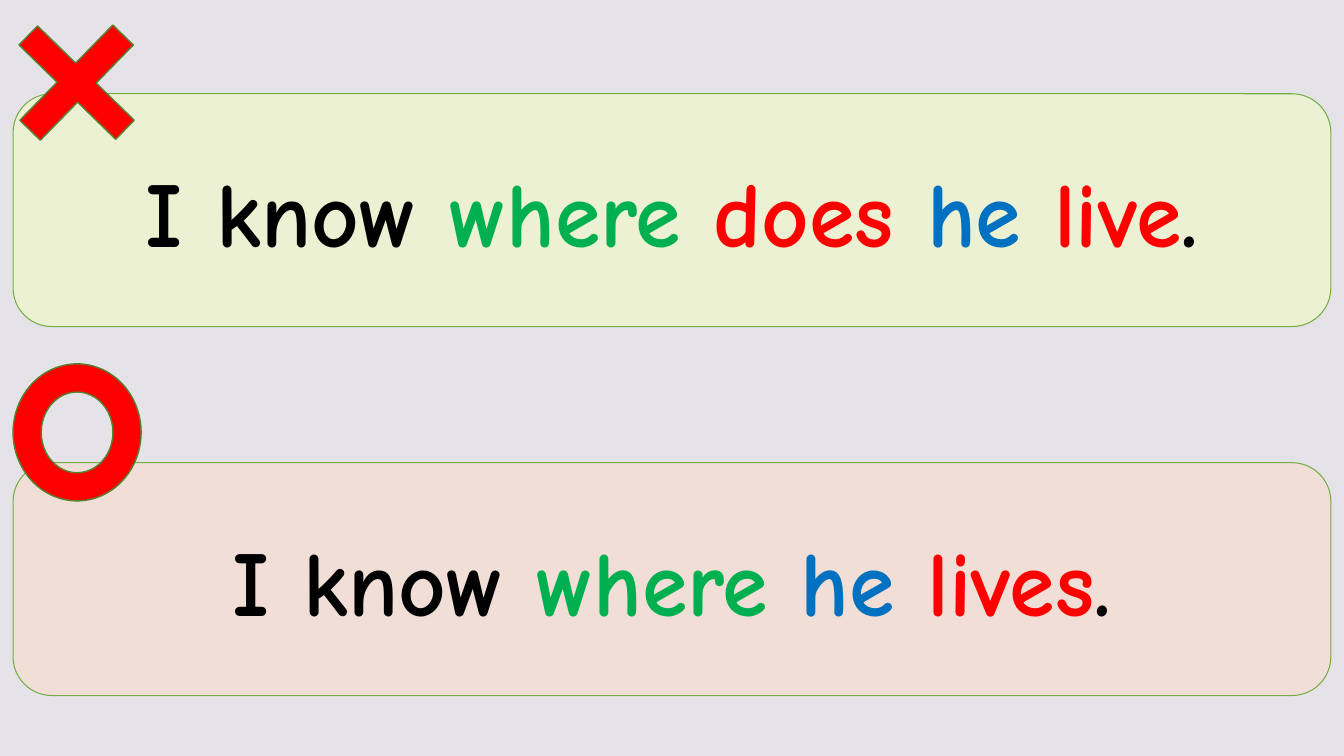
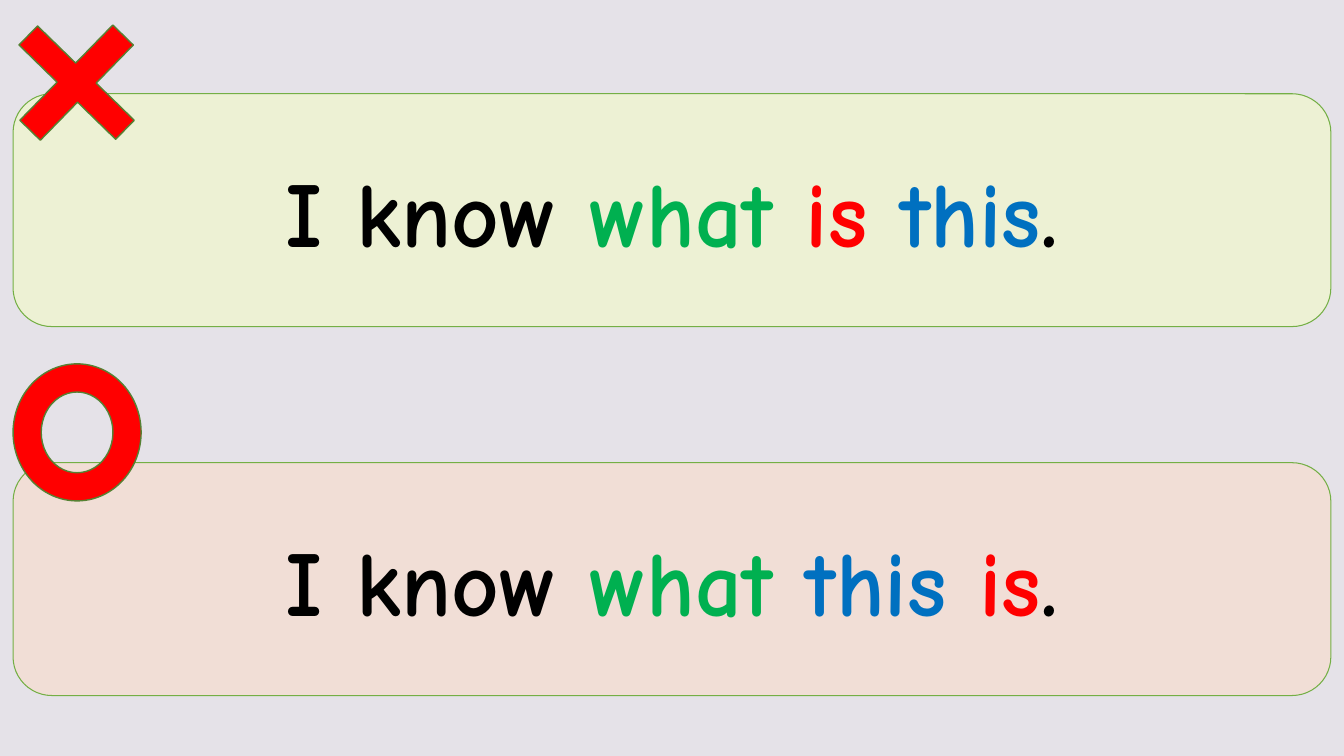
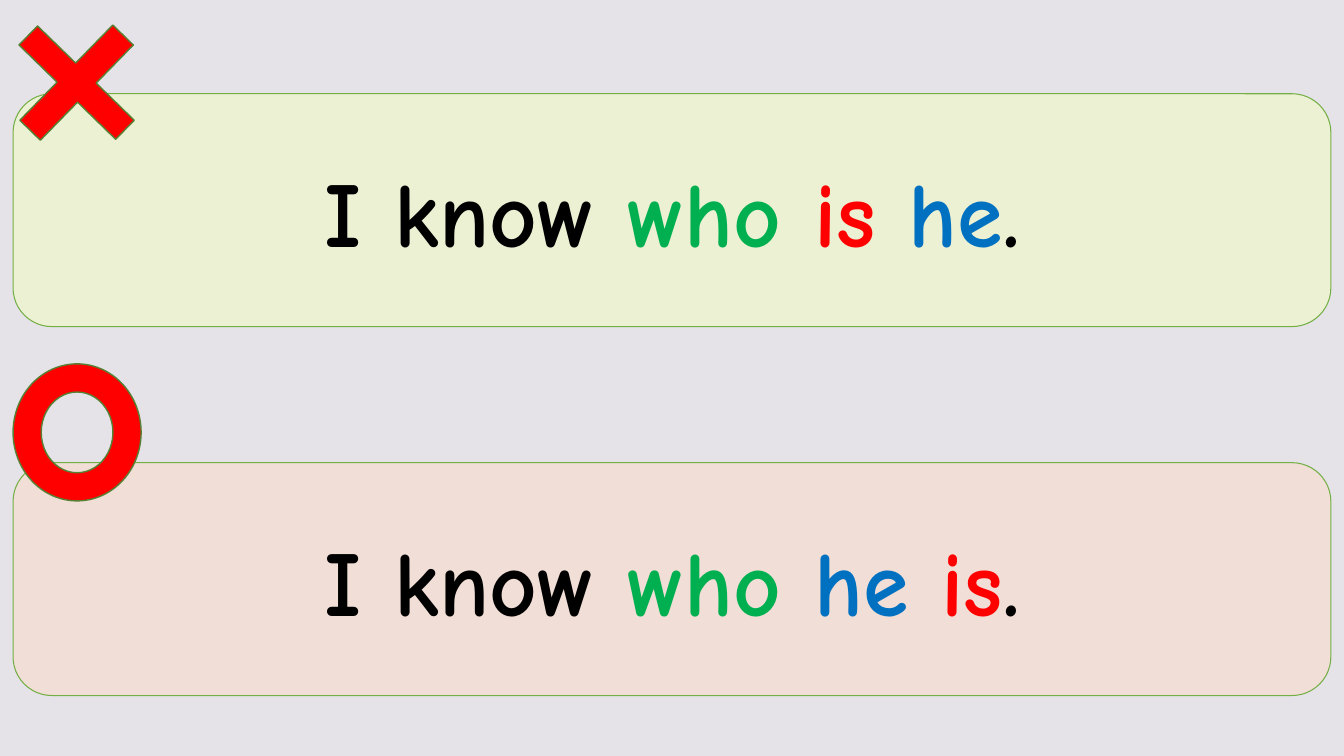
from pptx import Presentation
from pptx.dml.color import RGBColor
from pptx.enum.shapes import MSO_SHAPE
from pptx.enum.text import MSO_ANCHOR, PP_ALIGN
from pptx.util import Pt

PANEL = MSO_SHAPE.FLOWCHART_ALTERNATE_PROCESS
CROSS = MSO_SHAPE.CROSS
RING = MSO_SHAPE.DONUT
MIDDLE = MSO_ANCHOR.MIDDLE
CENTER = PP_ALIGN.CENTER

PX = 9144  # EMU per px, 100 px to the inch
SLIDE_SIZE = (1333, 750)
FONT, FONT_SIZE = "Comic Neue", 66

BACKGROUND = "E5E2E8"
PANEL_LINE, MARK_LINE = "74AF45", "568133"
MARK_FILL = "FF0000"
WORD_COLORS = {
    "plain": "000000",
    "question": "00B050",
    "subject": "0070C0",
    "verb": "FF0000",
}

# One slide each: the wrong word order, then the right one.
SLIDES = [
    (
        [("where ", "question"), ("does ", "verb"), ("he ", "subject"), ("live", "verb")],
        [("where ", "question"), ("he ", "subject"), ("lives", "verb")],
    ),
    (
        [("what ", "question"), ("is ", "verb"), ("this", "subject")],
        [("what ", "question"), ("this ", "subject"), ("is", "verb")],
    ),
    (
        [("who ", "question"), ("is ", "verb"), ("he", "subject")],
        [("who ", "question"), ("he ", "subject"), ("is", "verb")],
    ),
]
OPENING, ENDING = ("I know ", "plain"), (".", "plain")

PANEL_LEFT, PANEL_WIDTH, PANEL_HEIGHT = 13, 1307, 231
ROWS = [
    {"top": 93, "fill": "EDF1D4",
     "mark": {"kind": CROSS, "at": (9, 16, 134, 132), "adjust": 0.4, "rotation": 44.3}},
    {"top": 459, "fill": "F1DED6",
     "mark": {"kind": RING, "at": (13, 361, 127, 136), "adjust": 0.22}},
]


def color(value):
    return RGBColor.from_string(value)


def add_box(slide, kind, at, fill, line, line_width, adjust=None, rotation=0):
    box = slide.shapes.add_shape(kind, *(length * PX for length in at))
    box.shadow.inherit = False
    box.fill.solid()
    box.fill.fore_color.rgb = color(fill)
    box.line.color.rgb = color(line)
    box.line.width = Pt(line_width)
    box.rotation = rotation
    if adjust is not None:
        box.adjustments[0] = adjust
    return box


def write_sentence(box, words):
    frame = box.text_frame
    frame.word_wrap = True
    frame.vertical_anchor = MIDDLE
    para = frame.paragraphs[0]
    para.alignment = CENTER
    for text, role in words:
        span = para.add_run()
        span.text = text
        span.font.name = FONT
        span.font.size = Pt(FONT_SIZE)
        span.font.bold = True
        span.font.color.rgb = color(WORD_COLORS[role])


def main():
    deck = Presentation()
    deck.slide_width, deck.slide_height = (length * PX for length in SLIDE_SIZE)
    backdrop = deck.slide_master.background.fill
    backdrop.solid()
    backdrop.fore_color.rgb = color(BACKGROUND)
    blank = deck.slide_layouts.get_by_name("Blank")

    for sentences in SLIDES:
        slide = deck.slides.add_slide(blank)
        for row, clause in zip(ROWS, sentences):
            at = (PANEL_LEFT, row["top"], PANEL_WIDTH, PANEL_HEIGHT)
            panel = add_box(slide, PANEL, at, row["fill"], PANEL_LINE, 0.75)
            write_sentence(panel, [OPENING, *clause, ENDING])
            add_box(slide, fill=MARK_FILL, line=MARK_LINE, line_width=1, **row["mark"])

    deck.save("out.pptx")


if __name__ == "__main__":
    main()
